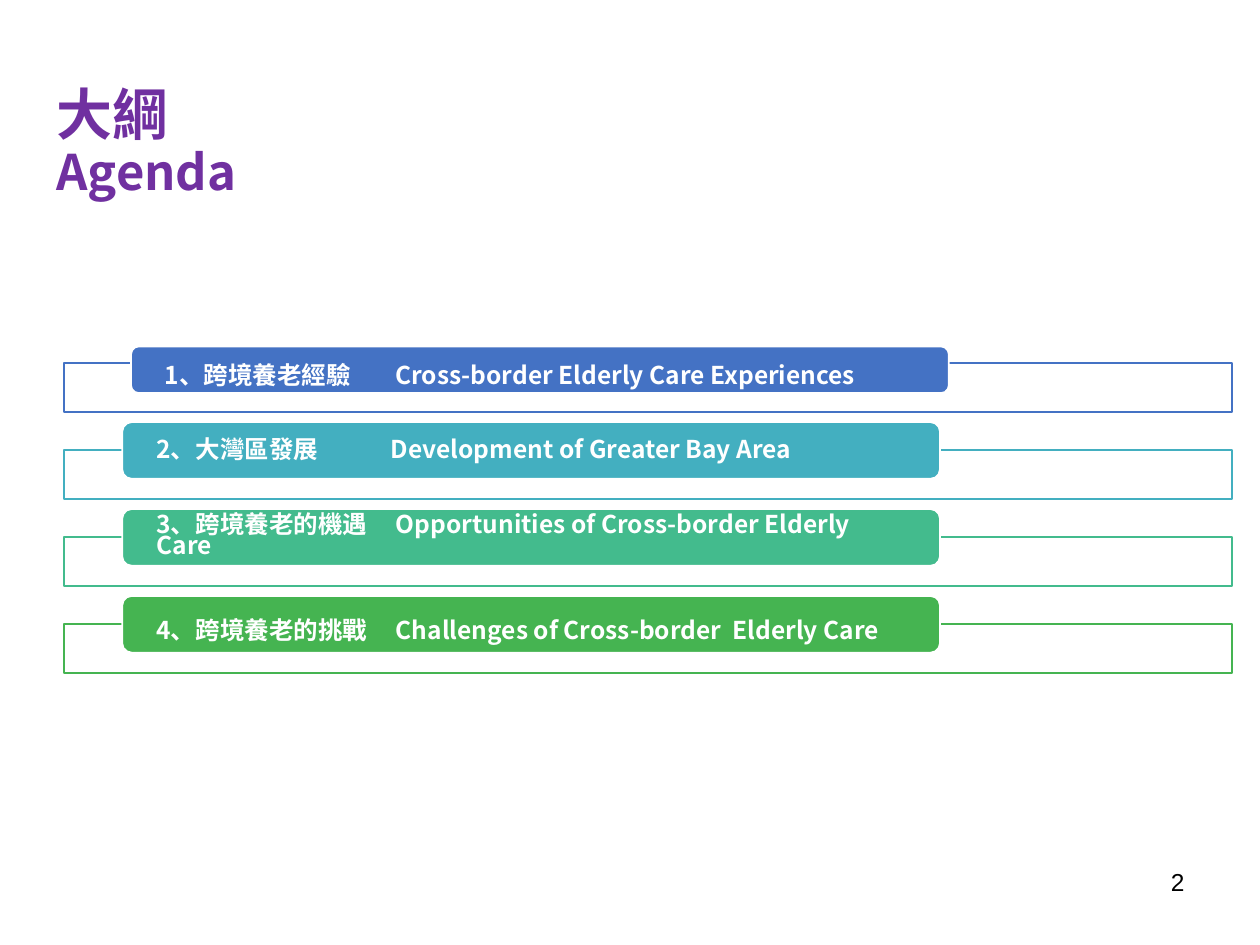
"""Builds the bilingual agenda slide with four framed topic bars."""
from lxml import etree
from pptx import Presentation, util as u
from pptx.dml.color import RGBColor
from pptx.enum import shapes, text
from pptx.oxml.ns import qn

FONT = "Noto Sans CJK SC"
WHITE, PURPLE, BLACK = "FFFFFF", "7030A0", "000000"
TITLE = [("大綱 ", 32), ("Agenda", 28)]
PAGE_NUMBER = "2"
FRAME_LEFT, FRAME_TOP, FRAME_WIDTH, FRAME_HEIGHT = 0.51, 2.88, 9.27, 0.39
ROW_PITCH = 0.69
BAR_LEFT, BAR_WIDTH, BAR_HEIGHT, BAR_RISE = 0.97, 6.49, 0.45, 0.22
FIRST_BAR = {"left": 1.04, "height": 0.37, "rise": 0.13}
TOPICS = [
    {"name": "1、跨境養老經驗", "english": "Cross-border Elderly Care Experiences",
     "color": "4472C4", "tab": 1.83, "drop": 0.11, **FIRST_BAR},
    {"name": "2、大灣區發展", "english": "Development of Greater Bay Area",
     "color": "43AFC0", "tab": 1.86},
    {"name": "3、跨境養老的機遇", "english": "Opportunities of Cross-border Elderly Care",
     "color": "43BB8D", "spacing": 0.72},
    {"name": "4、跨境養老的挑戰", "english": "Challenges of Cross-border  Elderly Care",
     "color": "45B451", "drop": 0.11},
]


def rgb(value):
    return RGBColor.from_string(value)


def inches(*lengths):
    return [u.Inches(length) for length in lengths]


def style_span(span, size, color):
    span.font.name, span.font.size, span.font.bold = FONT, u.Pt(size), True
    span.font.color.rgb = rgb(color)
    etree.SubElement(span.font._element, qn("a:ea"), typeface=FONT)


def add_block(page, kind, place, fill, line):
    block = page.shapes.add_shape(kind, *inches(*place))
    block.shadow.inherit = False
    block.fill.solid()
    block.fill.fore_color.rgb = rgb(fill)
    block.line.color.rgb = rgb(line)
    block.line.width = u.Pt(1)
    return block


def add_title(page):
    frame = page.shapes.add_textbox(*inches(0.35, 0.52, 9, 1.25)).text_frame
    frame.word_wrap = True
    frame.vertical_anchor = text.MSO_ANCHOR.MIDDLE
    para = frame.paragraphs[0]
    para.line_spacing = 0.9
    for index, (words, size) in enumerate(TITLE):
        if index:
            para.add_line_break()
        span = para.add_run()
        span.text = words
        style_span(span, size, PURPLE)


def add_topic(page, row, topic):
    top = FRAME_TOP + row * ROW_PITCH
    color = topic["color"]
    add_block(page, shapes.MSO_SHAPE.RECTANGLE,
              (FRAME_LEFT, top, FRAME_WIDTH, FRAME_HEIGHT), WHITE, color)
    bar = add_block(page, shapes.MSO_SHAPE.ROUNDED_RECTANGLE,
                    (topic.get("left", BAR_LEFT), top - topic.get("rise", BAR_RISE),
                     BAR_WIDTH, topic.get("height", BAR_HEIGHT)), color, WHITE)
    frame = bar.text_frame
    frame.word_wrap = True
    frame.vertical_anchor = text.MSO_ANCHOR.MIDDLE
    frame.margin_left = frame.margin_right = u.Inches(0.25)
    frame.margin_top, frame.margin_bottom = inches(topic.get("drop", 0), 0)
    para = frame.paragraphs[0]
    para.alignment = text.PP_ALIGN.LEFT
    para.line_spacing = topic.get("spacing", 0.9)
    tabs = etree.SubElement(para._p.get_or_add_pPr(), qn("a:tabLst"))
    etree.SubElement(tabs, qn("a:tab"), pos=str(u.Inches(topic.get("tab", 1.9))), algn="l")
    span = para.add_run()
    span.text = f"{topic['name']}\t{topic['english']}"
    style_span(span, 14, WHITE)


def add_page_number(page):
    para = page.shapes.add_textbox(*inches(7.17, 6.83, 2.33, 0.52)).text_frame.paragraphs[0]
    para.text = PAGE_NUMBER
    para.alignment = text.PP_ALIGN.RIGHT
    para.font.name, para.font.size = "Arial", u.Pt(14)
    para.font.color.rgb = rgb(BLACK)
    para._p.getparent().bodyPr.set("wrap", "square")


def main():
    deck = Presentation()
    deck.slide_width, deck.slide_height = inches(10, 7.5)
    page = deck.slides.add_slide(deck.slide_layouts[6])
    add_title(page)
    for row, topic in enumerate(TOPICS):
        add_topic(page, row, topic)
    add_page_number(page)
    deck.save("out.pptx")


if __name__ == "__main__":
    main()
